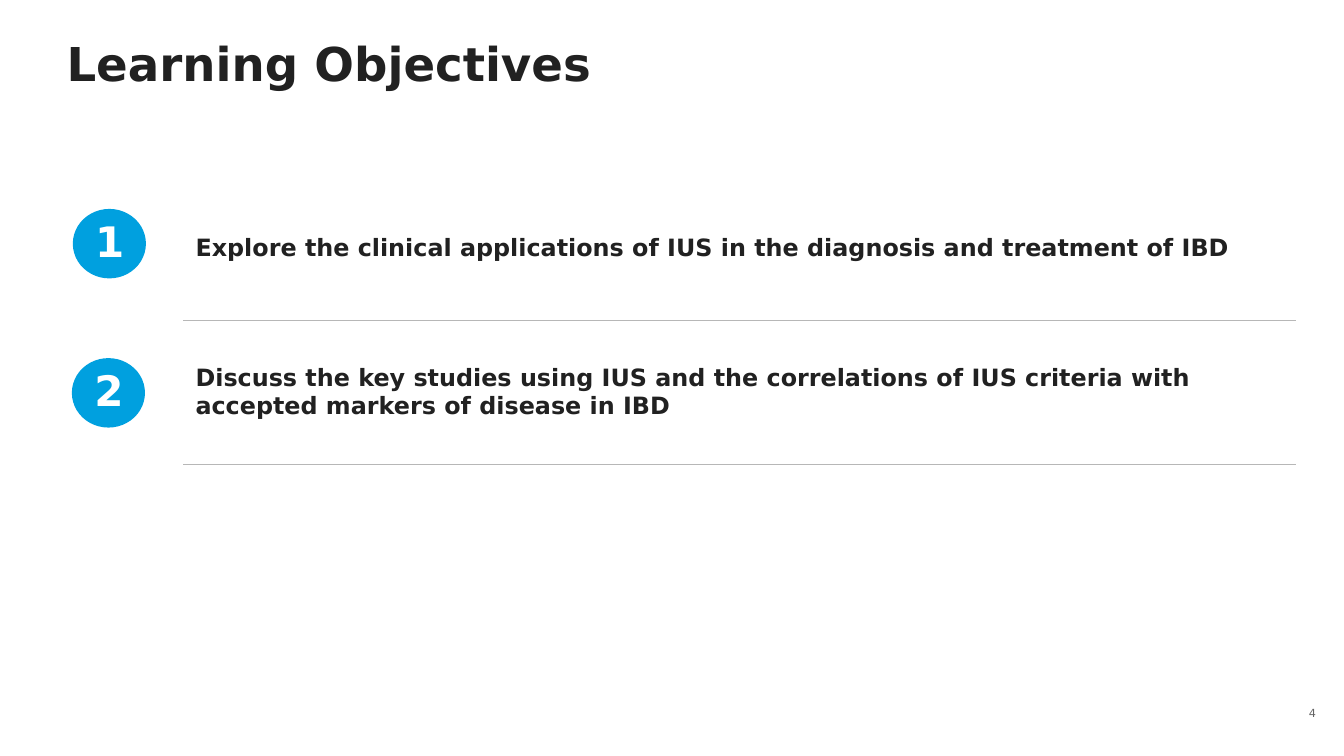
from dataclasses import dataclass

from lxml.etree import SubElement
from pptx import Presentation
from pptx.dml.color import RGBColor
from pptx.enum.shapes import MSO_SHAPE
from pptx.enum.text import MSO_ANCHOR, MSO_AUTO_SIZE, PP_ALIGN
from pptx.oxml.ns import qn
from pptx.slide import Slide
from pptx.table import _Cell
from pptx.text.text import TextFrame
from pptx.util import Inches, Pt

INK = RGBColor(0x21, 0x21, 0x21)
BLUE = RGBColor(0x00, 0xA0, 0xDF)
GRAY = RGBColor(0x64, 0x64, 0x64)
RULE = RGBColor(0xB7, 0xB7, 0xB7)
WHITE = RGBColor(0xFF, 0xFF, 0xFF)
FONT = "DejaVu Sans"
WIDE, HIGH = Inches(13.33), Inches(7.5)


@dataclass(frozen=True)
class Box:
    left: float
    top: float
    width: float
    height: float

    def place(self) -> tuple[int, int, int, int]:
        return (
            round(WIDE * self.left / 100),
            round(HIGH * self.top / 100),
            round(WIDE * self.width / 100),
            round(HIGH * self.height / 100),
        )


@dataclass(frozen=True)
class Goal:
    mark: str
    text: str
    left: float


GOALS = [
    Goal("1", "Explore the clinical applications of IUS in the diagnosis and treatment of IBD", 5.55),
    Goal(
        "2",
        "Discuss the key studies using IUS and the correlations of IUS criteria with accepted markers of disease in IBD",
        5.48,
    ),
]
TITLE = Box(4.95, 5.47, 83.27, 6.67)
TABLE = Box(13.65, 23.33, 82.75, 38.13)
PAGE = Box(95.5, 91.87, 3.15, 4.8)
FIRST, STEP = 27.87, 19.73


def write(
    frame: TextFrame,
    text: str,
    *,
    size: float,
    color: RGBColor = INK,
    bold: bool = True,
    align: PP_ALIGN = PP_ALIGN.LEFT,
    space: float = 1.0,
) -> None:
    frame.text = text
    para = frame.paragraphs[0]
    para.alignment = align
    para.line_spacing = space
    para.space_before = Pt(0)
    font = para.runs[0].font
    font.name, font.size, font.bold = FONT, Pt(size), bold
    font.color.rgb = color


def edge(cell: _Cell, side: str, shown: bool) -> None:
    line = SubElement(cell._tc.get_or_add_tcPr(), qn(f"a:{side}"), w=str(Pt(1)))
    if shown:
        fill = SubElement(line, qn("a:solidFill"))
        SubElement(fill, qn("a:srgbClr"), val=str(RULE))
    else:
        SubElement(line, qn("a:noFill"))


def head(slide: Slide) -> None:
    title = slide.shapes.title
    title.left, title.top, title.width, title.height = TITLE.place()
    frame = title.text_frame
    frame.margin_left = frame.margin_right = 0
    frame.margin_top = frame.margin_bottom = 0
    frame.vertical_anchor = MSO_ANCHOR.MIDDLE
    frame.auto_size = MSO_AUTO_SIZE.NONE
    write(frame, "Learning Objectives", size=33.3, space=0.9)


def grid(slide: Slide) -> None:
    table = slide.shapes.add_table(len(GOALS), 1, *TABLE.place()).table
    table.first_row = table.horz_banding = False
    for row, goal in enumerate(GOALS):
        cell = table.cell(row, 0)
        cell.vertical_anchor = MSO_ANCHOR.MIDDLE
        cell.margin_left, cell.margin_right = Inches(0.12), Inches(0.06)
        cell.margin_top = cell.margin_bottom = Inches(0.04)
        for side in ("lnL", "lnR", "lnT", "lnB"):
            edge(cell, side, side == "lnB" or (side == "lnT" and row > 0))
        cell.fill.background()
        write(cell.text_frame, goal.text, size=17)


def badge(slide: Slide, goal: Goal, top: float) -> None:
    group = slide.shapes.add_group_shape()
    disc = group.shapes.add_shape(MSO_SHAPE.OVAL, *Box(goal.left, top, 5.18, 8.73).place())
    disc.shadow.inherit = False
    disc.fill.solid()
    disc.fill.fore_color.rgb = disc.line.color.rgb = BLUE
    disc.line.width = Pt(2.5)
    label = group.shapes.add_textbox(*Box(goal.left - 3.9, top, 13.05, 8.13).place())
    label.text_frame.word_wrap = True
    write(label.text_frame, goal.mark, size=30, color=WHITE, align=PP_ALIGN.CENTER)


def foot(slide: Slide) -> None:
    frame = slide.shapes.add_textbox(*PAGE.place()).text_frame
    frame.word_wrap = True
    frame.vertical_anchor = MSO_ANCHOR.MIDDLE
    write(frame, "4", size=8, color=GRAY, bold=False, align=PP_ALIGN.RIGHT)


def main() -> None:
    deck = Presentation()
    deck.slide_width, deck.slide_height = WIDE, HIGH
    slide = deck.slides.add_slide(deck.slide_layouts[5])
    head(slide)
    grid(slide)
    for row, goal in enumerate(GOALS):
        badge(slide, goal, FIRST + row * STEP)
    foot(slide)
    deck.save("out.pptx")


if __name__ == "__main__":
    main()
